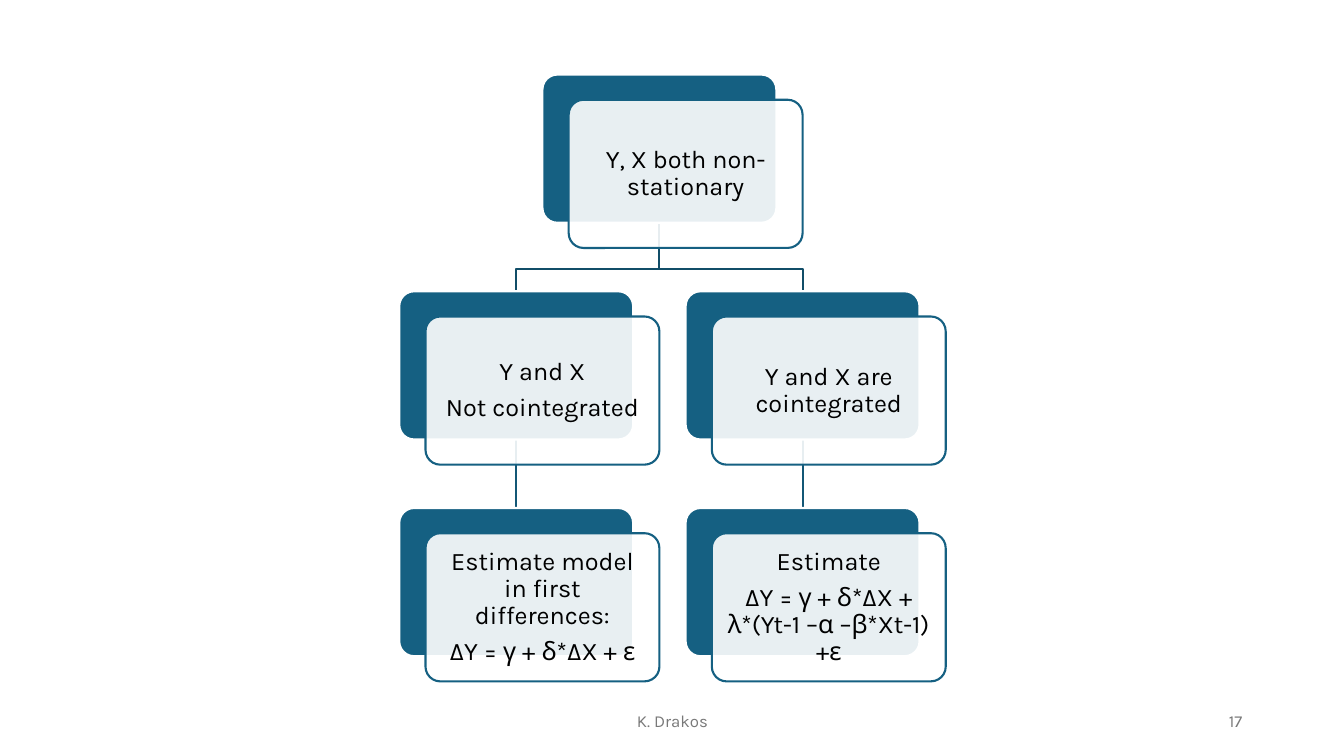
from dataclasses import dataclass

from lxml.etree import SubElement
from pptx import Presentation
from pptx.dml.color import RGBColor
from pptx.enum.shapes import MSO_CONNECTOR, MSO_SHAPE
from pptx.enum.text import MSO_ANCHOR, PP_ALIGN
from pptx.oxml.ns import qn
from pptx.shapes.autoshape import Shape
from pptx.shapes.connector import Connector
from pptx.slide import Slide
from pptx.util import Inches, Pt

COLORS = {
    "card": "156082",
    "panel": "FFFFFF",
    "text": "000000",
    "upper link": "114D68",
    "lower link": "135776",
    "footer": "797979",
}
FONT = "Karla"
LINE_WIDTH = Pt(1.5)

# The grid: a column is half the distance between two sibling cards.
LEFT, TOP = 3.96, 0.74
COLUMN_STEP, ROW_STEP = 1.42, 2.15
CARD_WIDTH, CARD_HEIGHT = 2.32, 1.47
PANEL_SHIFT_X, PANEL_SHIFT_Y = 0.26, 0.25
ELBOW_DROP = 0.46


@dataclass(frozen=True)
class Node:
    column: int
    row: int
    lines: tuple[str, ...]

    @property
    def left(self) -> float:
        return LEFT + self.column * COLUMN_STEP

    @property
    def top(self) -> float:
        return TOP + self.row * ROW_STEP

    @property
    def center(self) -> float:
        return self.left + CARD_WIDTH / 2

    @property
    def bottom(self) -> float:
        return self.top + CARD_HEIGHT


@dataclass(frozen=True)
class FooterItem:
    text: str
    left: float
    width: float
    align: PP_ALIGN


ROOT = Node(1, 0, ("Y, X both non-stationary",))
BRANCHES = (
    (
        Node(0, 1, ("Y and X", "Not cointegrated")),
        Node(0, 2, ("Estimate model in first differences:", "ΔY = γ + δ*ΔX + ε")),
    ),
    (
        Node(2, 1, ("Y and X are cointegrated",)),
        Node(2, 2, ("Estimate", "ΔY = γ + δ*ΔX + λ*(Yt-1 –α –β*Xt-1) +ε")),
    ),
)
FOOTER = (
    FooterItem("K. Drakos", 4.42, 4.5, PP_ALIGN.CENTER),
    FooterItem("17", 9.42, 3, PP_ALIGN.RIGHT),
)


def rgb(name: str) -> RGBColor:
    return RGBColor.from_string(COLORS[name])


def draw_elbow(page: Slide, parent: Node, child: Node) -> None:
    start_x, end_x = Inches(parent.center), Inches(child.center)
    start_y, end_y = Inches(parent.bottom), Inches(child.top)
    bend = Inches(parent.bottom + ELBOW_DROP)
    builder = page.shapes.build_freeform(start_x, start_y)
    builder.add_line_segments(
        [(start_x, bend), (end_x, bend), (end_x, end_y)], close=False
    )
    elbow = builder.convert_to_shape()
    elbow.shadow.inherit = False
    elbow.fill.background()
    elbow.line.color.rgb = rgb("upper link")
    elbow.line.width = LINE_WIDTH


def draw_straight_link(page: Slide, parent: Node, child: Node) -> Connector:
    link = page.shapes.add_connector(
        MSO_CONNECTOR.STRAIGHT,
        Inches(parent.center), Inches(parent.bottom),
        Inches(child.center), Inches(child.top),
    )
    link.line.color.rgb = rgb("lower link")
    link.line.width = LINE_WIDTH
    SubElement(link._element.spPr, qn("a:effectLst"))
    return link


def draw_rounded(page: Slide, left: float, top: float, fill: str, line: str) -> Shape:
    box = page.shapes.add_shape(
        MSO_SHAPE.ROUNDED_RECTANGLE,
        Inches(left), Inches(top), Inches(CARD_WIDTH), Inches(CARD_HEIGHT),
    )
    box.adjustments[0] = 0.1
    box.shadow.inherit = False
    box.fill.solid()
    box.fill.fore_color.rgb = rgb(fill)
    box.line.color.rgb = rgb(line)
    box.line.width = LINE_WIDTH
    return box


def draw_node(page: Slide, node: Node) -> Shape:
    """Draw a card with its translucent text panel and return the card."""
    card = draw_rounded(page, node.left, node.top, "card", "panel")
    panel = draw_rounded(
        page, node.left + PANEL_SHIFT_X, node.top + PANEL_SHIFT_Y, "panel", "card"
    )
    color = panel._element.spPr.find(qn("a:solidFill")).find(qn("a:srgbClr"))
    SubElement(color, qn("a:alpha"), val="90000")

    frame = panel.text_frame
    frame.word_wrap = True
    frame.vertical_anchor = MSO_ANCHOR.MIDDLE
    frame.margin_left = frame.margin_right = Inches(0.1)
    frame.margin_top = frame.margin_bottom = Inches(0.1)
    frame.text = "\n".join(node.lines)
    for para in frame.paragraphs:
        para.alignment = PP_ALIGN.CENTER
        para.line_spacing = 0.9
        para.space_after = Pt(6.3)
        para.font.name = FONT
        para.font.size = Pt(18)
        para.font.color.rgb = rgb("text")
    return card


def draw_footer_item(page: Slide, item: FooterItem) -> None:
    box = page.shapes.add_textbox(
        Inches(item.left), Inches(6.95), Inches(item.width), Inches(0.4)
    )
    frame = box.text_frame
    frame.word_wrap = True
    frame.vertical_anchor = MSO_ANCHOR.MIDDLE
    para = frame.paragraphs[0]
    para.text = item.text
    para.alignment = item.align
    para.font.name = FONT
    para.font.size = Pt(12)
    para.font.color.rgb = rgb("footer")


def main() -> None:
    deck = Presentation()
    deck.slide_width, deck.slide_height = Inches(13.33), Inches(7.5)
    page = deck.slides.add_slide(deck.slide_layouts[6])

    # Links come first so that they lie behind the panels.
    links = []
    for case, action in BRANCHES:
        draw_elbow(page, ROOT, case)
        links.append(draw_straight_link(page, case, action))

    draw_node(page, ROOT)
    for (case, action), link in zip(BRANCHES, links):
        link.begin_connect(draw_node(page, case), 2)
        link.end_connect(draw_node(page, action), 0)

    for item in FOOTER:
        draw_footer_item(page, item)
    deck.save("out.pptx")


if __name__ == "__main__":
    main()
